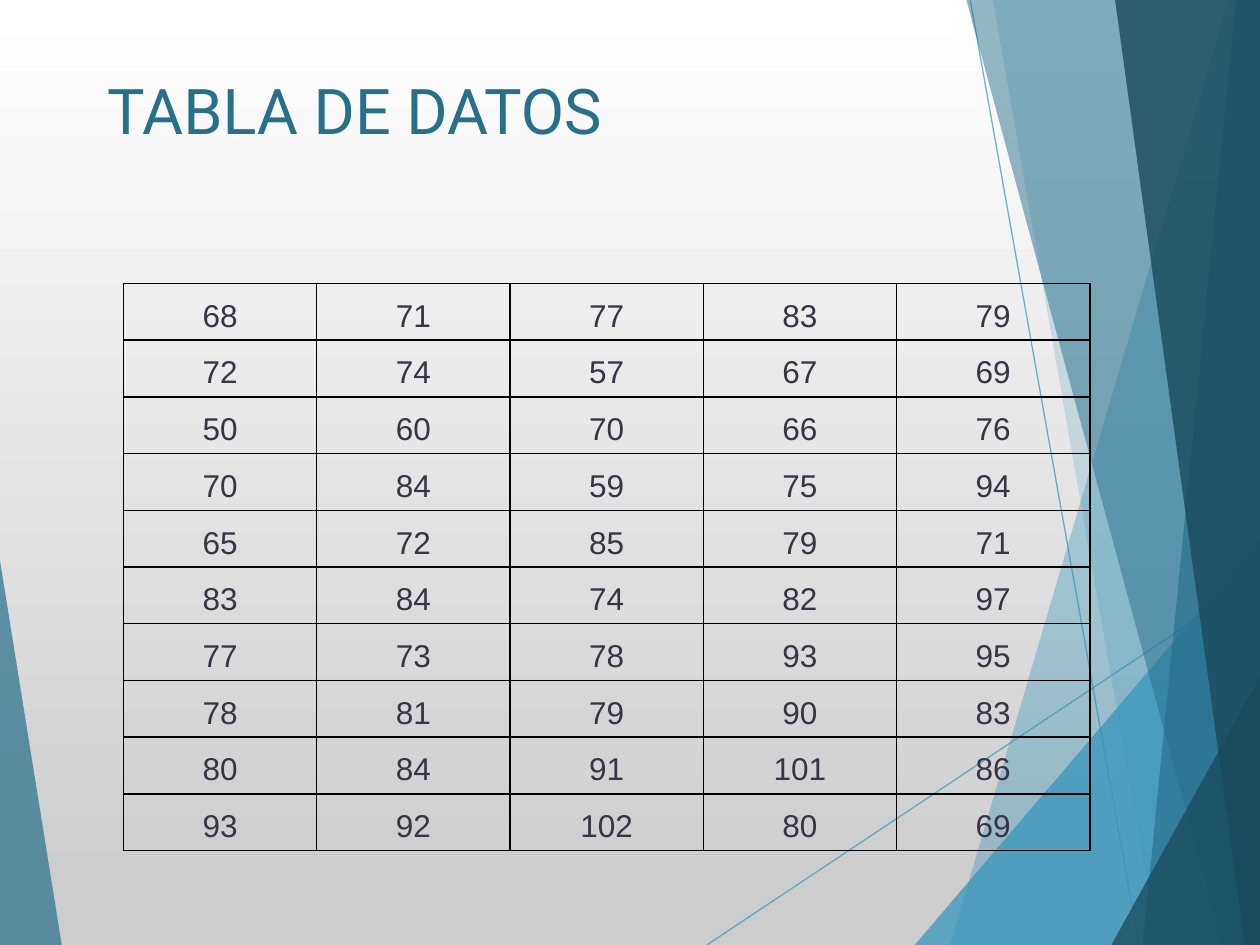
from dataclasses import dataclass

from lxml import etree
from pptx import Presentation
from pptx.dml.color import RGBColor
from pptx.enum.shapes import MSO_CONNECTOR
from pptx.enum.text import MSO_ANCHOR, PP_ALIGN
from pptx.oxml.ns import qn
from pptx.util import Inches, Pt

STRAIGHT = MSO_CONNECTOR.STRAIGHT
TOP, BOTTOM = MSO_ANCHOR.TOP, MSO_ANCHOR.BOTTOM
LEFT, CENTER = PP_ALIGN.LEFT, PP_ALIGN.CENTER


@dataclass(frozen=True)
class Theme:
    sky: str = "3494BA"
    teal: str = "276F8B"
    navy: str = "1A4A5D"
    ink: str = "373545"
    border: str = "000000"
    bg_top: str = "FFFFFF"
    bg_bottom: str = "CDCDCD"
    title_font: str = "Roboto"
    data_font: str = "Arial"
    title_size: int = 36
    data_size: int = 18
    ray_width: float = 0.75
    border_width: int = 1


THEME = Theme()
WIDTH, HEIGHT = 10, 7.5

# Content
TITLE = "TABLA DE DATOS"
DATA = [
    (68, 71, 77, 83, 79),
    (72, 74, 57, 67, 69),
    (50, 60, 70, 66, 76),
    (70, 84, 59, 75, 94),
    (65, 72, 85, 79, 71),
    (83, 84, 74, 82, 97),
    (77, 73, 78, 93, 95),
    (78, 81, 79, 90, 83),
    (80, 84, 91, 101, 86),
    (93, 92, 102, 80, 69),
]

# Decoration, back to front: rays (start, end) and facets (colour, opacity %, corners)
RAYS = [((5.61, HEIGHT), (10.01, 4.57)), ((7.7, 0), (9.04, HEIGHT))]
RAY_OPACITY = 70
FACETS = [
    (THEME.sky, 36, [(9.75, 0), (7.54, HEIGHT), (WIDTH, HEIGHT), (WIDTH, 0)]),
    (THEME.sky, 20, [(7.88, 0), (9.19, HEIGHT), (WIDTH, HEIGHT), (WIDTH, 0)]),
    (THEME.sky, 72, [(7.26, HEIGHT), (WIDTH, 4.29), (WIDTH, HEIGHT)]),
    (THEME.teal, 50, [(7.67, 0), (9.7, HEIGHT), (WIDTH, HEIGHT), (WIDTH, 0)]),
    (THEME.teal, 66, [(9.81, 0), (9.07, HEIGHT), (WIDTH, HEIGHT), (WIDTH, 0)]),
    (THEME.navy, 80, [(8.85, 0), (9.88, HEIGHT), (WIDTH, HEIGHT), (WIDTH, 0)]),
    (THEME.navy, 76, [(8.82, HEIGHT), (WIDTH, 5.37), (WIDTH, HEIGHT)]),
    (THEME.teal, 70, [(0, 4.45), (0.49, HEIGHT), (0, HEIGHT)]),
]

# Layout
TITLE_BOX = (0.75, 0.52, 7.67, 1.42)
TABLE_BOX = (0.98, 2.25, 7.67, 4.5)
HANGING_INDENT = 0.38


def rgb(color):
    return RGBColor.from_string(color)


def set_opacity(fill_owner, percent):
    color = next(fill_owner.iter(qn("a:srgbClr")))
    etree.SubElement(color, qn("a:alpha")).set("val", str(percent * 1000))


def write_text(frame, text, *, font, size, color, align=LEFT, hanging=0):
    paragraph = frame.paragraphs[0]
    paragraph.alignment = align
    if hanging:
        properties = paragraph._p.get_or_add_pPr()
        properties.set("marL", str(Inches(hanging)))
        properties.set("indent", str(-Inches(hanging)))
    run = paragraph.add_run()
    run.text = text
    run.font.name = font
    run.font.size = Pt(size)
    run.font.color.rgb = rgb(color)


def paint_background(slide):
    fill = slide.background.fill
    fill.gradient()
    fill.gradient_angle = 270
    stops = ((0, THEME.bg_top), (0.94, THEME.bg_bottom))
    for stop, (position, color) in zip(fill.gradient_stops, stops):
        stop.position = position
        stop.color.rgb = rgb(color)


def add_ray(slide, start, end):
    ray = slide.shapes.add_connector(STRAIGHT, *map(Inches, start + end))
    ray.line.color.rgb = rgb(THEME.sky)
    ray.line.width = Pt(THEME.ray_width)
    properties = ray._element.spPr
    set_opacity(properties, RAY_OPACITY)
    etree.SubElement(properties, qn("a:effectLst"))


def add_facet(slide, color, opacity, corners):
    first, *rest = [(Inches(x), Inches(y)) for x, y in corners]
    outline = slide.shapes.build_freeform(*first)
    outline.add_line_segments(rest, close=True)
    facet = outline.convert_to_shape()
    facet.shadow.inherit = False
    facet.line.fill.background()
    facet.fill.solid()
    facet.fill.fore_color.rgb = rgb(color)
    set_opacity(facet._element.spPr, opacity)


def add_title(slide):
    title = slide.shapes.title
    title.left, title.top, title.width, title.height = map(Inches, TITLE_BOX)
    frame = title.text_frame
    frame.word_wrap = True
    frame.vertical_anchor = TOP
    write_text(frame, TITLE, font=THEME.title_font, size=THEME.title_size,
               color=THEME.teal)
    # Bring the title in front of the facets
    title.element.getparent().append(title.element)


def add_borders(cell):
    properties = cell._tc.get_or_add_tcPr()
    for position, side in enumerate(("a:lnL", "a:lnR", "a:lnT", "a:lnB")):
        line = etree.Element(qn(side), w=str(Pt(THEME.border_width)))
        fill = etree.SubElement(line, qn("a:solidFill"))
        etree.SubElement(fill, qn("a:srgbClr"), val=THEME.border)
        properties.insert(position, line)


def add_data_table(slide):
    rows, columns = len(DATA), len(DATA[0])
    table = slide.shapes.add_table(rows, columns, *map(Inches, TABLE_BOX)).table
    table.first_row = table.horz_banding = False
    for r, values in enumerate(DATA):
        for c, value in enumerate(values):
            cell = table.cell(r, c)
            cell.fill.background()
            cell.vertical_anchor = BOTTOM
            add_borders(cell)
            write_text(cell.text_frame, str(value), font=THEME.data_font,
                       size=THEME.data_size, color=THEME.ink, align=CENTER,
                       hanging=HANGING_INDENT)


def main():
    deck = Presentation()
    deck.slide_width, deck.slide_height = Inches(WIDTH), Inches(HEIGHT)
    slide = deck.slides.add_slide(deck.slide_layouts.get_by_name("Title Only"))
    paint_background(slide)
    for start, end in RAYS:
        add_ray(slide, start, end)
    for color, opacity, corners in FACETS:
        add_facet(slide, color, opacity, corners)
    add_title(slide)
    add_data_table(slide)
    deck.save("out.pptx")


if __name__ == "__main__":
    main()
